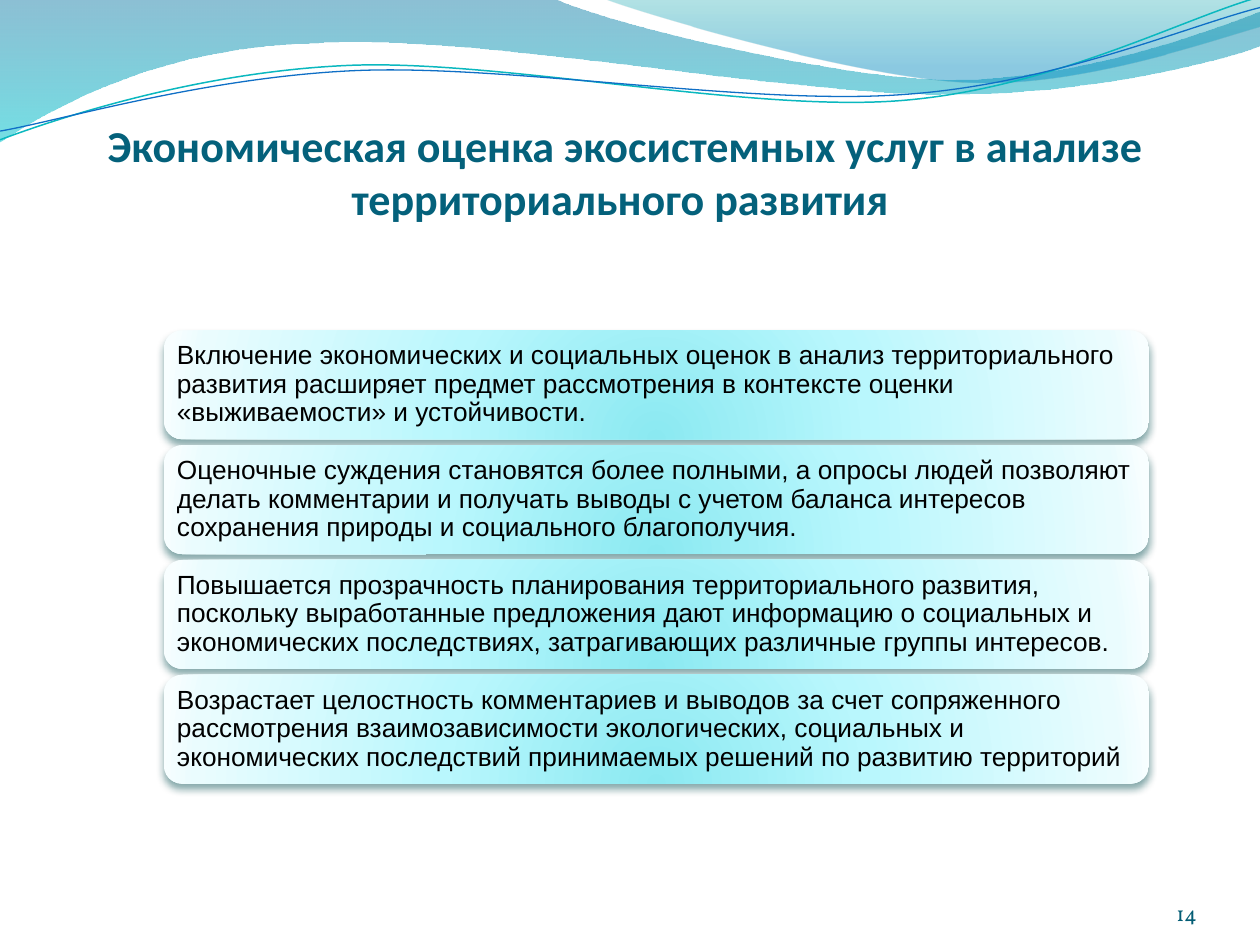
from pptx import Presentation
from pptx.dml.color import RGBColor
from pptx.enum import shapes, text
from pptx.oxml import parse_xml
from pptx.oxml.ns import nsdecls, qn
from pptx.util import Pt

TITLE_COLOR = RGBColor(0x04, 0x61, 0x7B)
NUMBER_COLOR = RGBColor(0x04, 0x5D, 0x75)
BLACK = RGBColor(0, 0, 0)
TEAL = RGBColor(0x0A, 0xB8, 0xBF)
BLUE = RGBColor(0x0F, 0x6F, 0xC6)
SHADOW = RGBColor(0x02, 0x4B, 0x4E)
# Gradient stops: position %, colour, opacity %
BAND_STOPS = [(0, RGBColor(0x00, 0x74, 0xA1), 45), (100, RGBColor(0x00, 0xC6, 0xCF), 55)]
CREST_STOPS = [(0, RGBColor(0x00, 0xA1, 0xA9), 30), (80, RGBColor(0x00, 0x8B, 0xBF), 45)]
CARD_STOPS = [(0, RGBColor(0x8B, 0xE9, 0xF1), 100), (43, RGBColor(0xB9, 0xF7, 0xFD), 100),
              (93, RGBColor(0xEA, 0xFC, 0xFE), 100), (100, RGBColor(0xF8, 0xFE, 0xFF), 100)]
DOWNWARD = '<a:lin ang="5400000" scaled="0"/>'
FROM_BELOW = ('<a:path path="circle"><a:fillToRect l="50000" t="130000" '
              'r="50000" b="-30000"/></a:path>')

# Outlines in points: a pair is a straight step, six numbers a Bezier step
BAND = [(0, 0), (316.8, -0.7), (342.7, 12.2, 478.1, 45.4, 545.8, 45.4),
        (614.2, 45.4, 689.8, 18.7, 720, 6.5), (720.7, 25.9),
        (707.8, 31.7, 626.4, 54.7, 537.1, 54), (447.8, 54, 275, 20.2, 185, 24.5),
        (92.9, 25.9, 33.1, 59.8, -0.7, 81.4), (0, 0)]
CREST = [(344.9, -0.7), (366.5, 7.9, 491, 44.6, 553.7, 46.8),
         (616.3, 49.7, 691.9, 23, 720, 15.1), (720, 0), (344.9, -0.7)]
TEAL_CURVE = [(0, 79.9), (34.6, 67, 113.8, 41, 199.4, 37.4),
              (284.4, 33.8, 427, 64.1, 513.4, 57.6), (599.8, 51.1, 675.4, 10.8, 718.6, -1.4)]
BLUE_CURVE = [(0, 74.9), (33.8, 69.1, 118.1, 43.9, 203.8, 40.3),
              (290.2, 36.7, 429.8, 60.5, 516.2, 54), (601.9, 48.2, 677.5, 15.1, 720, 4.3)]

TITLE = "Экономическая оценка экосистемных услуг в анализе территориального развития "
CARDS = [
    "Включение экономических и социальных оценок в анализ территориального развития "
    "расширяет предмет рассмотрения в контексте оценки «выживаемости» и устойчивости.",
    "Оценочные суждения становятся более полными, а опросы людей позволяют делать "
    "комментарии и получать выводы с учетом баланса интересов сохранения природы и "
    "социального благополучия.",
    "Повышается прозрачность планирования территориального развития, поскольку "
    "выработанные предложения дают информацию о социальных и экономических "
    "последствиях, затрагивающих различные группы интересов.",
    "Возрастает целостность комментариев и выводов за счет сопряженного рассмотрения "
    "взаимозависимости экологических, социальных и экономических последствий "
    "принимаемых решений по развитию территорий",
]
CARD_LEFT, CARD_TOP, CARD_WIDTH, CARD_HEIGHT, CARD_PITCH = 93.6, 188.8, 563, 62.2, 65.6
CARD_INSET = 3


def set_attrs(obj, values):
    for name, value in values.items():
        setattr(obj, name, value)


def write_text(sp, content, frame, paragraph, font, color):
    tf = sp.text_frame
    set_attrs(tf, {"word_wrap": True, "auto_size": text.MSO_AUTO_SIZE.NONE, **frame})
    p = tf.paragraphs[0]
    set_attrs(p, paragraph)
    r = p.add_run()
    r.text = content
    set_attrs(r.font, font)
    r.font.color.rgb = color


def margins(left, top, right, bottom):
    return {"margin_left": Pt(left), "margin_top": Pt(top),
            "margin_right": Pt(right), "margin_bottom": Pt(bottom)}


def set_gradient(sp, stops, direction):
    sp.fill.gradient()
    gs = "".join(f'<a:gs pos="{pos * 1000}"><a:srgbClr val="{color}">'
                 f'<a:alpha val="{alpha * 1000}"/></a:srgbClr></a:gs>'
                 for pos, color, alpha in stops)
    grad = parse_xml(f'<a:gradFill {nsdecls("a")} rotWithShape="1">'
                     f'<a:gsLst>{gs}</a:gsLst>{direction}</a:gradFill>')
    spPr = sp._element.spPr
    spPr.replace(spPr.find(qn("a:gradFill")), grad)


def set_shadow(sp):
    sp.shadow.inherit = False
    effects = sp._element.spPr.find(qn("a:effectLst"))
    effects.append(parse_xml(
        f'<a:outerShdw {nsdecls("a")} blurRad="{Pt(4.5)}" dist="{Pt(3)}" dir="5400000" '
        f'rotWithShape="0"><a:srgbClr val="{SHADOW}"><a:alpha val="48000"/>'
        '</a:srgbClr></a:outerShdw>'))


def bend_segments(sp, steps):
    """Replace the straight segments that stand for Bezier steps by real curves."""
    segments = list(sp._element.spPr.iter(qn("a:lnTo")))
    for segment, step in zip(segments, steps):
        if len(step) == 6:
            pts = "".join(f'<a:pt x="{Pt(x) - sp.left}" y="{Pt(y) - sp.top}"/>'
                          for x, y in zip(step[::2], step[1::2]))
            curve = parse_xml(f'<a:cubicBezTo {nsdecls("a")}>{pts}</a:cubicBezTo>')
            segment.getparent().replace(segment, curve)


def add_outline(s, outline, close):
    start, *rest = [(Pt(step[-2]), Pt(step[-1])) for step in outline]
    builder = s.shapes.build_freeform(*start, scale=1.0)
    builder.add_line_segments(rest, close=close)
    sp = builder.convert_to_shape()
    bend_segments(sp, outline[1:])
    sp.shadow.inherit = False
    return sp


def add_wave(s, outline, stops):
    sp = add_outline(s, outline, close=True)
    set_gradient(sp, stops, DOWNWARD)
    sp.line.fill.background()


def add_curve(s, outline, color, width):
    sp = add_outline(s, outline, close=False)
    sp.fill.background()
    sp.line.color.rgb = color
    sp.line.width = Pt(width)


def add_title(s):
    sp = s.shapes.title
    set_attrs(sp, {"left": Pt(53.8), "top": Pt(88.6), "width": Pt(607), "height": Pt(39.6)})
    write_text(sp, TITLE,
               {"vertical_anchor": text.MSO_ANCHOR.BOTTOM, **margins(0, 3.6, 0, 0)},
               {"alignment": text.PP_ALIGN.CENTER},
               {"name": "Calibri", "size": Pt(25.2), "bold": True}, TITLE_COLOR)


def add_card(s, top, content):
    sp = s.shapes.add_shape(shapes.MSO_SHAPE.ROUNDED_RECTANGLE, Pt(CARD_LEFT), Pt(top),
                            Pt(CARD_WIDTH), Pt(CARD_HEIGHT))
    set_gradient(sp, CARD_STOPS, FROM_BELOW)
    sp.line.fill.background()
    set_shadow(sp)
    label = s.shapes.add_textbox(Pt(CARD_LEFT + CARD_INSET), Pt(top + CARD_INSET),
                                 Pt(CARD_WIDTH - 2 * CARD_INSET),
                                 Pt(CARD_HEIGHT - 2 * CARD_INSET))
    write_text(label, content,
               {"vertical_anchor": text.MSO_ANCHOR.MIDDLE, **margins(4.5, 4.5, 4.5, 4.5)},
               {"alignment": text.PP_ALIGN.LEFT, "line_spacing": 0.9},
               {"name": "Arial", "size": Pt(15)}, BLACK)


def add_slide_number(s, number):
    sp = s.shapes.add_textbox(Pt(624), Pt(500.4), Pt(60), Pt(28.8))
    write_text(sp, number,
               {"vertical_anchor": text.MSO_ANCHOR.BOTTOM, **margins(0, 0, 0, 0)},
               {"alignment": text.PP_ALIGN.RIGHT},
               {"name": "Vollkorn", "size": Pt(12)}, NUMBER_COLOR)


def main():
    prs = Presentation()
    prs.slide_width, prs.slide_height = Pt(720), Pt(540)
    s = prs.slides.add_slide(prs.slide_layouts[5])
    add_wave(s, BAND, BAND_STOPS)
    add_wave(s, CREST, CREST_STOPS)
    add_curve(s, TEAL_CURVE, TEAL, 0.85)
    add_curve(s, BLUE_CURVE, BLUE, 0.75)
    add_title(s)
    add_slide_number(s, "14")
    for i, content in enumerate(CARDS):
        add_card(s, CARD_TOP + i * CARD_PITCH, content)
    prs.save("out.pptx")


if __name__ == "__main__":
    main()
